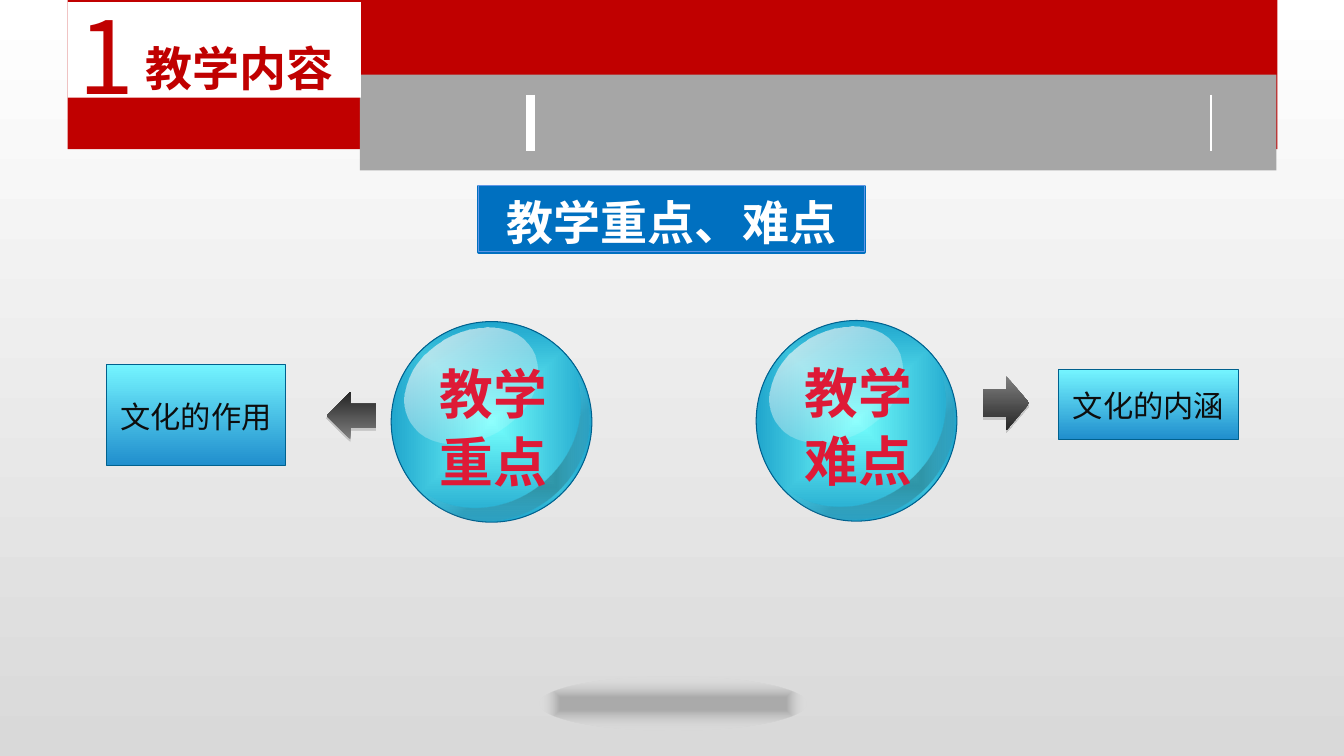
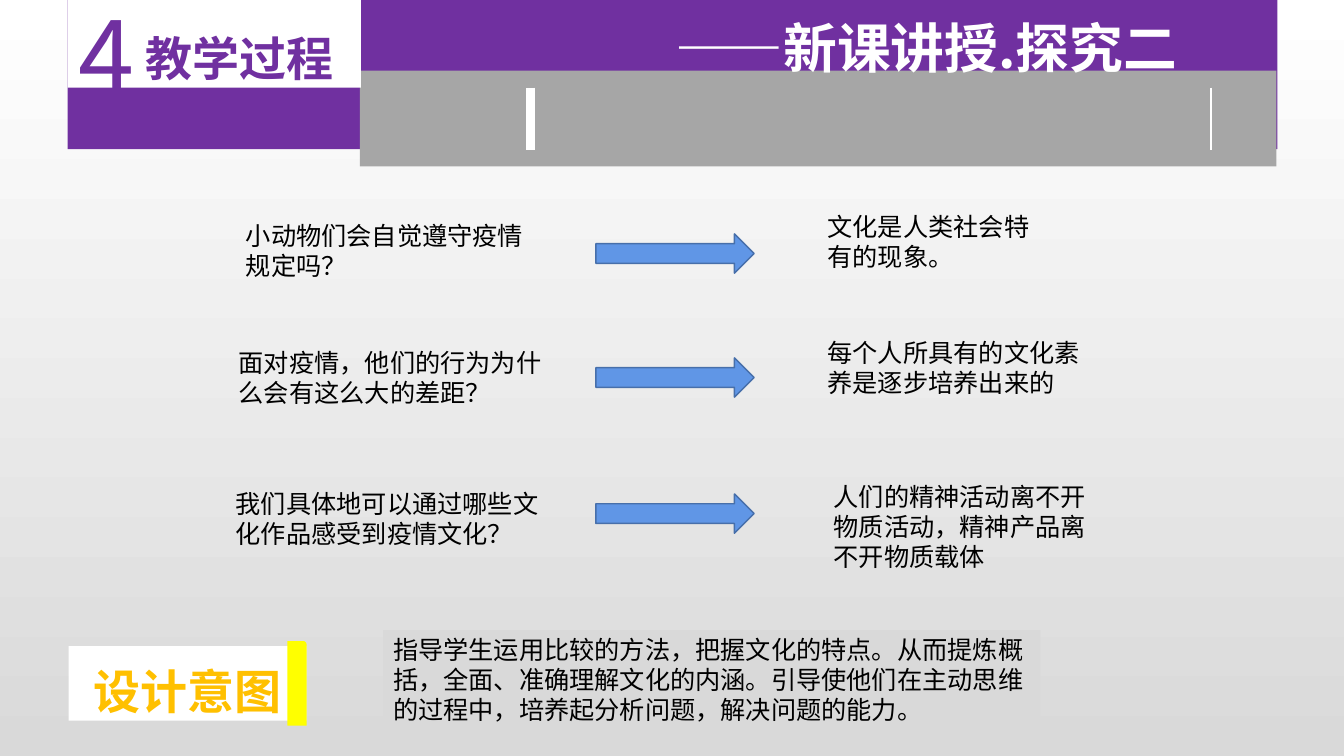
from lxml import etree
from pptx import Presentation, util as u
from pptx.dml.color import RGBColor
from pptx.enum import shapes, text
from pptx.oxml.ns import qn

SCALE = 9144  # EMU in one px, 100 px to the inch
CJK = "Noto Sans CJK SC"
WHITE, BLACK, GREY = "FFFFFF", "000000", "A6A6A6"
RED, PURPLE, BLUE, SOFT_BLUE = "C00000", "7030A0", "0070C0", "6096E6"
BALL_LINE = "00618E"
SHAPE = shapes.MSO_SHAPE
ALIGN, ANCHOR = text.PP_ALIGN, text.MSO_ANCHOR


def px(*lengths):
    return [u.Emu(length * SCALE) for length in lengths]


def rgb(color):
    return RGBColor.from_string(color)


# Fills and effects
def add_color(parent, color, alpha=100):
    element = etree.SubElement(parent, qn("a:srgbClr"), val=color)
    if alpha < 100:
        etree.SubElement(element, qn("a:alpha"), val=str(alpha * 1000))


def set_gradient(fill, holder, stops, centred=False):
    """Stops are (position, colour[, alpha]); runs downwards or from the centre."""
    fill.gradient()
    gradient = next(holder.iter(qn("a:gradFill")))
    gradient.clear()
    gradient.set("rotWithShape", "1")
    stop_list = etree.SubElement(gradient, qn("a:gsLst"))
    for position, *color in stops:
        stop = etree.SubElement(stop_list, qn("a:gs"), pos=str(position * 1000))
        add_color(stop, *color)
    if centred:
        route = etree.SubElement(gradient, qn("a:path"), path="shape")
        sides = {side: "50000" for side in "ltrb"}
        etree.SubElement(route, qn("a:fillToRect"), **sides)
    else:
        etree.SubElement(gradient, qn("a:lin"), ang="5400000", scaled="0")


def add_shadow(shape):
    effects = shape.element.spPr.find(qn("a:effectLst"))
    shadow = etree.SubElement(effects, qn("a:outerShdw"), blurRad="0",
                              dist="22860", dir="5400000", rotWithShape="0")
    add_color(shadow, "808080", 35)


# Text
def write(shape, content, size, color, font=CJK, bold=False, align=ALIGN.LEFT,
          anchor=ANCHOR.TOP, leading=1.27, wrap=True):
    frame = shape.text_frame
    frame.text = content
    frame.auto_size = text.MSO_AUTO_SIZE.NONE
    frame.word_wrap = wrap
    frame.vertical_anchor = anchor
    for paragraph in frame.paragraphs:
        paragraph.alignment = align
        paragraph.line_spacing = u.Pt(round(size * leading, 1))
        for run in paragraph.runs:
            run.font.size = u.Pt(size)
            run.font.bold = bold
            run.font.color.rgb = rgb(color)
            run.font.name = font
            etree.SubElement(run.font._element, qn("a:ea"), typeface=font)


def add_text(slide, box, content, size, color, **style):
    shape = slide.shapes.add_textbox(*px(*box))
    write(shape, content, size, color, **style)


def add_body(slide, box, content):
    add_text(slide, box, content, 18, BLACK, font="Arial", leading=1.19)


# Shapes
def add_shape(slide, kind, box, fill=None, line=None, width=0.75, centred=False,
              rotation=0, flip=False):
    """Fill is a colour, a list of gradient stops or None."""
    shape = slide.shapes.add_shape(kind, *px(*box))
    shape.shadow.inherit = False
    shape.rotation = rotation
    if flip:
        shape.element.spPr.xfrm.set("flipH", "1")
    if fill is None:
        shape.fill.background()
    elif isinstance(fill, str):
        shape.fill.solid()
        shape.fill.fore_color.rgb = rgb(fill)
    else:
        set_gradient(shape.fill, shape.element.spPr, fill, centred)
    if line:
        shape.line.color.rgb = rgb(line)
        shape.line.width = u.Pt(width)
    else:
        shape.line.fill.background()
    return shape


def add_rule(slide, x, top, bottom, width):
    rule = slide.shapes.add_connector(shapes.MSO_CONNECTOR.STRAIGHT,
                                      *px(x, top, x, bottom))
    rule.line.color.rgb = rgb(WHITE)
    rule.line.width = u.Pt(width)
    etree.SubElement(rule.element.spPr, qn("a:effectLst"))


# Shared parts
def start_slide(presentation):
    slide = presentation.slides.add_slide(presentation.slide_layouts[5])
    set_gradient(slide.background.fill, slide.element,
                 [(0, WHITE), (100, "D9D9D9")])
    return slide


def add_header(slide, number, title, color, title_top, grey_top, rule_span):
    add_shape(slide, SHAPE.RECTANGLE, (67, -3, 1200, 151), color)
    add_shape(slide, SHAPE.RECTANGLE, (357, grey_top, 909, 95), GREY)
    for x, width in ((526, 6.5), (1201, 1.5)):
        add_rule(slide, x, *rule_span, width)

    # Title placeholder, raised above the bands
    shape = slide.shapes.title
    shape.element.getparent().append(shape.element)
    shape.left, shape.top, shape.width, shape.height = px(67, title_top, 291, 95)
    shape.fill.solid()
    shape.fill.fore_color.rgb = rgb(WHITE)
    write(shape, title, 33.6, color, bold=True, anchor=ANCHOR.BOTTOM)
    frame = shape.text_frame
    frame.margin_left, frame.margin_right, frame.margin_bottom = px(77, 0, 2)
    add_text(slide, (68, -18, 70, 131), number, 72, color, wrap=False)


# Parts of the key points slide
def add_ball(slide, x, y, content):
    add_shape(slide, SHAPE.OVAL, (x, y, 199, 199),
              [(0, "74FFFD"), (100, "20A6CD")], BALL_LINE, centred=True)
    shade = add_shape(slide, SHAPE.MOON, (x + 86, y + 45, 87, 193),
                      [(24, BLACK, 24), (100, WHITE, 0)], centred=True,
                      rotation=53.6, flip=True)
    shade.adjustments[0] = 0.19
    add_shape(slide, SHAPE.OVAL, (x + 9, y + 11, 140, 105),
              [(0, "FFFCF9", 77), (100, WHITE, 0)], rotation=329.4, flip=True)
    add_text(slide, (x + 6, y + 30, 190, 139), content, 38.4, "DE1A37",
             bold=True, align=ALIGN.CENTER)


def add_label(slide, box, content):
    label = add_shape(slide, SHAPE.RECTANGLE, box,
                      [(0, "74F4FF"), (100, "208ECD")], BALL_LINE)
    write(label, content, 21.6, "0D0D0D", align=ALIGN.CENTER,
          anchor=ANCHOR.MIDDLE)


def add_pointer(slide, box, rotation=0):
    pointer = add_shape(slide, SHAPE.RIGHT_ARROW, box,
                        [(0, "7F7F7F"), (100, "262626")], rotation=rotation)
    add_shadow(pointer)


def build_key_points(presentation):
    slide = start_slide(presentation)
    add_shape(slide, SHAPE.OVAL, (535, 671, 265, 54),
              [(24, BLACK, 22), (100, WHITE, 0)], centred=True)
    add_pointer(slide, (324, 389, 49, 47), rotation=180)
    add_pointer(slide, (975, 373, 46, 54))
    add_ball(slide, 388, 319, "教学\n重点")
    add_ball(slide, 750, 318, "教学\n难点")
    add_label(slide, (106, 362, 177, 100), "文化的作用")
    add_label(slide, (1050, 367, 178, 69), "文化的内涵")
    add_header(slide, "1", "教学内容", RED, 2, 74, (94, 150))

    # Banner with a thin inner frame
    add_shape(slide, SHAPE.RECTANGLE, (475, 185, 382, 65), BLUE, BLUE, 2.75)
    banner = add_shape(slide, SHAPE.RECTANGLE, (475, 184, 382, 66),
                       line=SOFT_BLUE)
    write(banner, "教学重点、难点", 33.6, WHITE, bold=True, align=ALIGN.CENTER)


def build_inquiry(presentation):
    slide = start_slide(presentation)
    add_header(slide, "4", "教学过程", PURPLE, -8, 70, (87, 149))
    add_text(slide, (626, 6, 586, 75), "——新课讲授.探究二", 38.4, WHITE,
             bold=True, align=ALIGN.CENTER)

    # Question, arrow, answer
    rows = [
        ((234, 214, 315, 71), "小动物们会自觉遵守疫情规定吗？", 232,
         (811, 205, 243, 71), "文化是人类社会特有的现象。"),
        ((227, 340, 323, 71), "面对疫情，他们的行为为什么会有这么大的差距？", 355,
         (811, 330, 290, 71), "每个人所具有的文化素养是逐步培养出来的"),
        ((224, 480, 325, 71), "我们具体地可以通过哪些文化作品感受到疫情文化？", 490,
         (817, 473, 274, 101),
         "人们的精神活动离不开物质活动，精神产品离不开物质载体"),
    ]
    for question_box, question, arrow_top, answer_box, answer in rows:
        add_body(slide, question_box, question)
        add_shape(slide, SHAPE.RIGHT_ARROW, (591, arrow_top, 157, 39),
                  SOFT_BLUE, "476FAA", 1)
        add_body(slide, answer_box, answer)

    # Design intent
    intent = add_shape(slide, SHAPE.RECTANGLE, (380, 625, 652, 101), "D9D9D9")
    write(intent, "指导学生运用比较的方法，把握文化的特点。从而提炼概括，全面、准确理解"
          "文化的内涵。引导使他们在主动思维的过程中，培养起分析问题，解决问题的能力。",
          18, BLACK, font="Arial", leading=1.19)
    tag = add_shape(slide, SHAPE.RECTANGLE, (68, 641, 236, 74), WHITE)
    write(tag, "设计意图", 33.6, "FFC000", font="Roboto", bold=True,
          align=ALIGN.CENTER, anchor=ANCHOR.MIDDLE, leading=1.5)
    add_shape(slide, SHAPE.ROUND_1_RECTANGLE, (285, 636, 19, 84), "FFFF00")


def main():
    presentation = Presentation()
    presentation.slide_width, presentation.slide_height = px(1333, 750)
    build_key_points(presentation)
    build_inquiry(presentation)
    presentation.save("out.pptx")


if __name__ == "__main__":
    main()
